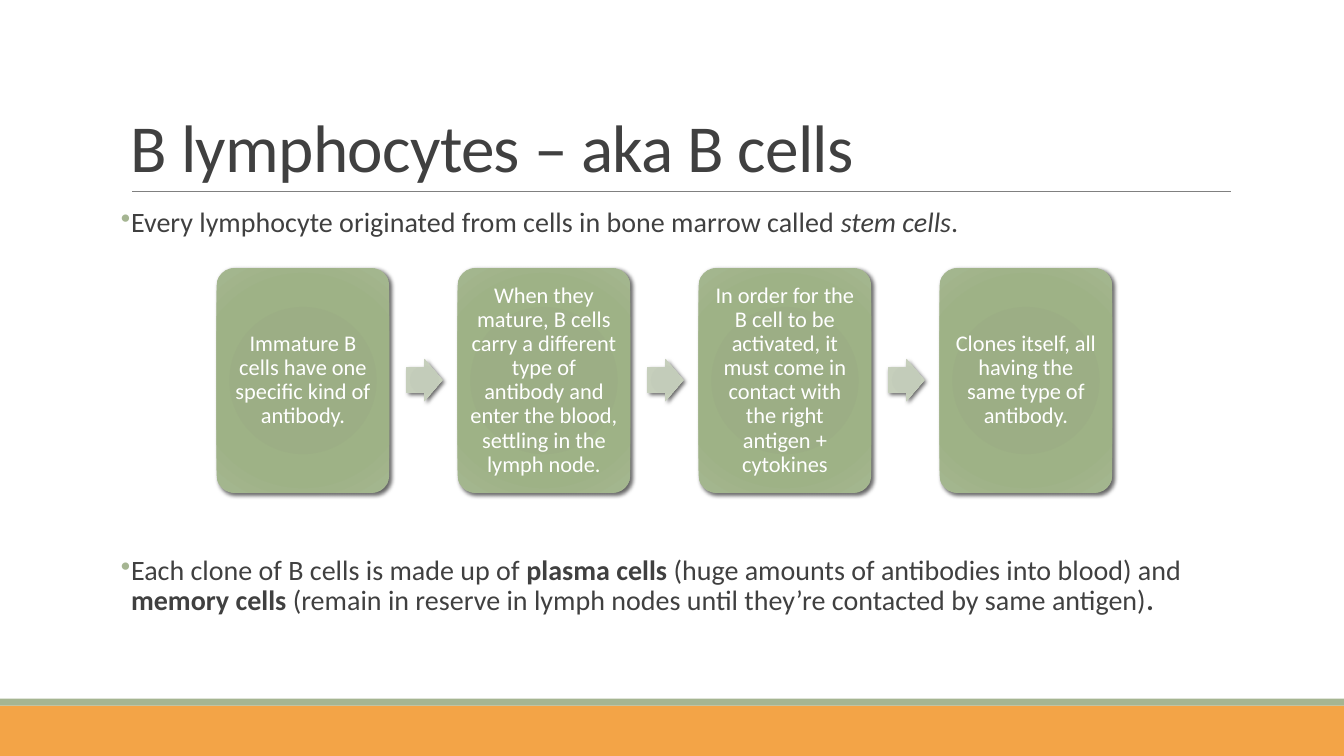
from dataclasses import dataclass

from lxml import etree
from pptx import Presentation
from pptx.dml.color import RGBColor
from pptx.enum.shapes import MSO_CONNECTOR, MSO_SHAPE
from pptx.enum.text import MSO_ANCHOR, PP_ALIGN
from pptx.oxml import parse_xml
from pptx.oxml.ns import nsdecls, qn
from pptx.util import Inches, Pt

RECT, ROUND, ARROW = MSO_SHAPE.RECTANGLE, MSO_SHAPE.ROUNDED_RECTANGLE, MSO_SHAPE.RIGHT_ARROW
STRAIGHT = MSO_CONNECTOR.STRAIGHT
TOP, MIDDLE, BOTTOM = MSO_ANCHOR.TOP, MSO_ANCHOR.MIDDLE, MSO_ANCHOR.BOTTOM
LEFT, CENTER = PP_ALIGN.LEFT, PP_ALIGN.CENTER


@dataclass(frozen=True)
class Theme:
    font: str = "Calibri"
    title: int = 48
    body: int = 20
    card: int = 16
    ink: str = "404040"
    white: str = "FFFFFF"
    rule: str = "808080"
    green: str = "A5B592"
    orange: str = "F3A447"
    card_fill: tuple = ((0, "9AAE83"), (34, "9CAE85"), (70, "9EB286"), (100, "A5B790"))
    arrow_fill: tuple = ((0, "C1CAB7"), (34, "C3CCBA"), (70, "C6CFBC"), (100, "CFD7C6"))


class Deck:
    """Draws on one slide; all lengths are percent of its width or height."""

    def __init__(self, theme):
        self.t = theme
        self.prs = Presentation()
        self.prs.slide_width, self.prs.slide_height = Inches(13.33), Inches(7.5)
        self.slide = self.prs.slides.add_slide(self.prs.slide_layouts[6])

    def place(self, x, y, w, h):
        sw, sh = self.prs.slide_width, self.prs.slide_height
        return [int(v * side / 100) for v, side in ((x, sw), (y, sh), (w, sw), (h, sh))]

    def bar(self, box, color):
        s = self.slide.shapes.add_shape(RECT, *self.place(*box))
        s.shadow.inherit = False
        s.fill.solid()
        s.fill.fore_color.rgb = RGBColor.from_string(color)
        s.line.fill.background()

    def rule(self, x1, x2, y):
        left, top, right, bottom = self.place(x1, y, x2, y)
        s = self.slide.shapes.add_connector(STRAIGHT, left, top, right, bottom)
        s.line.width = Pt(0.5)
        s.line.color.rgb = RGBColor.from_string(self.t.rule)
        etree.SubElement(s._element.spPr, qn("a:effectLst"))

    def glossy(self, kind, box, stops, adjustments):
        """Preset shape with a radial gradient and a soft shadow."""
        s = self.slide.shapes.add_shape(kind, *self.place(*box))
        for i, value in enumerate(adjustments):
            s.adjustments[i] = value
        s.line.fill.background()
        s.shadow.inherit = False
        s.fill.solid()
        spPr = s._element.spPr
        gs = "".join(f'<a:gs pos="{pos * 1000}"><a:srgbClr val="{c}"/></a:gs>' for pos, c in stops)
        spPr.replace(spPr.find(qn("a:solidFill")), parse_xml(
            f'<a:gradFill {nsdecls("a")} rotWithShape="1"><a:gsLst>{gs}</a:gsLst><a:path path="circle">'
            '<a:fillToRect l="100000" t="100000" r="100000" b="100000"/></a:path></a:gradFill>'))
        spPr.find(qn("a:effectLst")).append(parse_xml(
            f'<a:outerShdw {nsdecls("a")} blurRad="{Pt(3)}" dist="{Pt(2)}" dir="2700000" rotWithShape="0">'
            '<a:srgbClr val="000000"><a:alpha val="60000"/></a:srgbClr></a:outerShdw>'))
        return s

    def set_text(self, s, runs, size, color, insets, anchor=TOP, align=LEFT, spacing=0.9):
        """Fill a shape with one paragraph of (text, font format) runs."""
        tf = s.text_frame
        side, edge = (Inches(v) for v in insets)
        frame = {"word_wrap": True, "vertical_anchor": anchor, "margin_left": side,
                 "margin_right": side, "margin_top": edge, "margin_bottom": edge}
        for name, value in frame.items():
            setattr(tf, name, value)
        p = tf.paragraphs[0]
        p.alignment, p.line_spacing = align, spacing
        for text, extra in runs:
            r = p.add_run()
            r.text = text
            r.font.color.rgb = RGBColor.from_string(color)
            for name, value in {"name": self.t.font, "size": Pt(size), **extra}.items():
                setattr(r.font, name, value)
        return p

    def textbox(self, box):
        return self.slide.shapes.add_textbox(*self.place(*box))

    def title(self, box, text):
        p = self.set_text(self.textbox(box), [(text, {})], self.t.title, self.t.ink,
                          (0.1, 0.05), BOTTOM, spacing=0.85)
        p.runs[0]._r.get_or_add_rPr().set("spc", "-50")

    def bullet(self, box, runs):
        p = self.set_text(self.textbox(box), runs, self.t.body, self.t.ink, (0, 0.05))
        pPr = p._p.get_or_add_pPr()
        pPr.set("marL", str(Inches(0.1)))
        pPr.set("indent", str(Inches(-0.1)))
        color = etree.SubElement(pPr, qn("a:buClr"))
        etree.SubElement(color, qn("a:srgbClr")).set("val", self.t.green)
        etree.SubElement(pPr, qn("a:buChar")).set("char", "•")

    def card(self, box, text):
        s = self.glossy(ROUND, box, self.t.card_fill, [0.1])
        self.set_text(s, [(text, {})], self.t.card, self.t.white, (0.07, 0.07), MIDDLE, CENTER)

    def arrow(self, box):
        self.glossy(ARROW, box, self.t.arrow_fill, [0.6, 0.5])


STEPS = [
    "Immature B cells have one specific kind of antibody.",
    "When they mature, B cells carry a different type of antibody and enter the blood, "
    "settling in the lymph node.",
    "In order for the B cell to be activated, it must come in contact with the right "
    "antigen + cytokines",
    "Clones itself, all having the same type of antibody.",
]
ORIGIN = [
    ("Every lymphocyte originated from cells in bone marrow called ", {}),
    ("stem cells", {"italic": True}),
    (".", {}),
]
CLONES = [
    ("Each clone of B cells is made up of ", {}),
    ("plasma cells ", {"bold": True}),
    ("(huge amounts of antibodies into blood) and ", {}),
    ("memory cells ", {"bold": True}),
    ("(remain in reserve in lymph nodes until they’re contacted by same antigen)", {}),
    (".", {"bold": True}),
]
MARGIN, WIDTH = 9, 82.5
STEP_LEFT, STEP_PITCH, ARROW_OFFSET = 16.13, 17.93, 14.1


def main():
    deck = Deck(Theme())

    # Footer bands and title rule
    deck.bar((0, 93.33, 100, 6.67), deck.t.orange)
    deck.bar((0, 92.4, 100, 0.93), deck.t.green)
    deck.rule(9.83, 91.6, 25.33)

    # Title and bullets
    deck.title((MARGIN, 4.13, WIDTH, 21.2), "B lymphocytes – aka B cells")
    deck.bullet((MARGIN, 26.93, WIDTH, 6.67), ORIGIN)
    deck.bullet((MARGIN, 72.93, WIDTH, 10.67), CLONES)

    # Process: cards with an arrow between neighbours
    for i, text in enumerate(STEPS):
        x = STEP_LEFT + i * STEP_PITCH
        deck.card((x, 35.47, 12.83, 29.73), text)
        if i < len(STEPS) - 1:
            deck.arrow((x + ARROW_OFFSET, 47.47, 2.7, 5.6))

    deck.prs.save("out.pptx")


if __name__ == "__main__":
    main()
